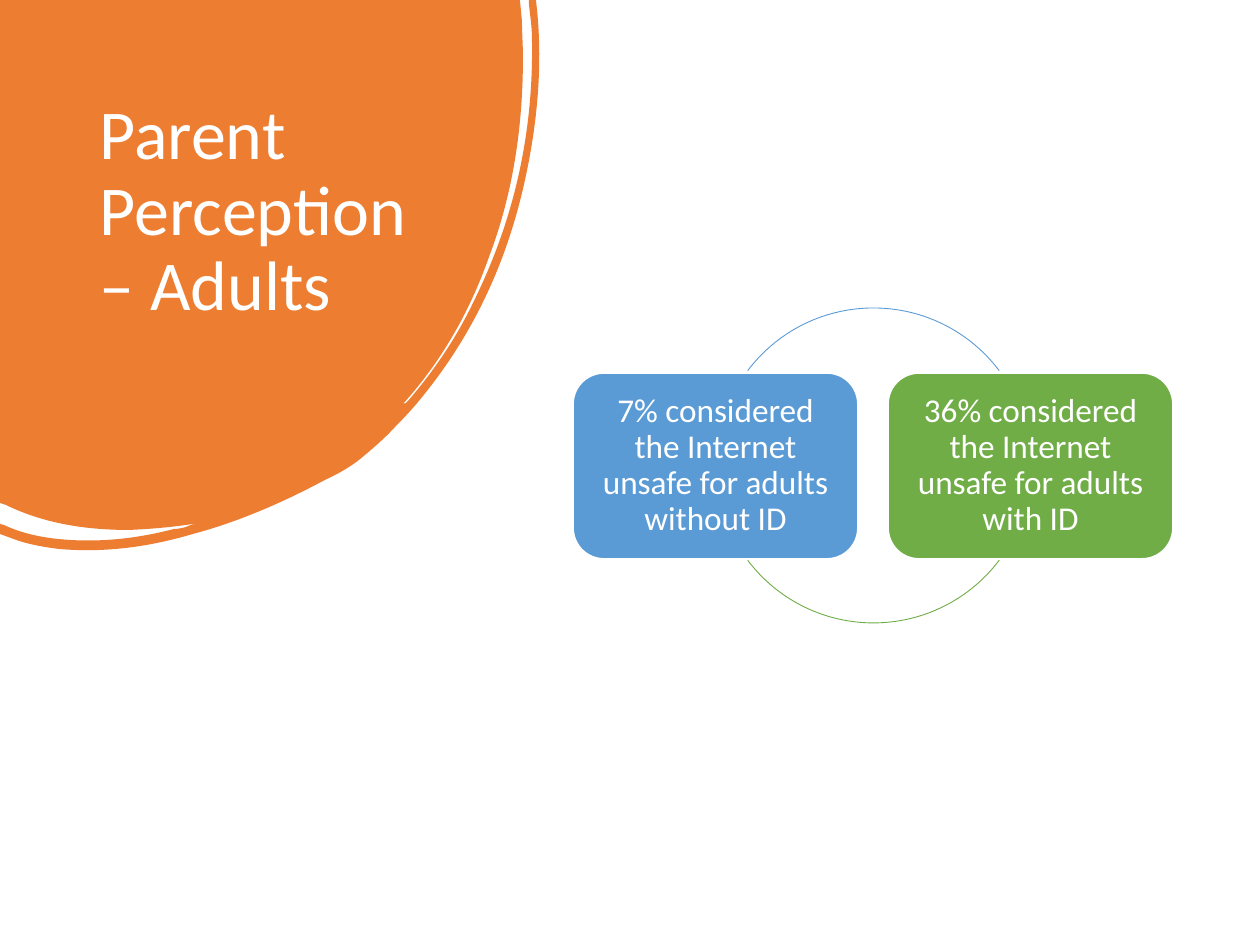
from dataclasses import dataclass

from lxml import etree
from pptx import Presentation
from pptx import util as u
from pptx.dml.color import RGBColor
from pptx.enum import shapes, text
from pptx.oxml.ns import qn

PX = 914400 / 126
FONT = "Calibri"
WHITE, ORANGE, BLUE, GREEN = "FFFFFF", "ED7D31", "5B9BD5", "70AD47"

# Two numbers draw a straight line, six a cubic Bézier curve.
BLOB_WIDTH, BLOB_HEIGHT = 539, 550
BLOB_OUTLINE = [
    (520, 0), (522, 21),
    (522, 33, 523, 45, 523, 57),
    (523, 127, 513, 194, 489, 257),
    (469, 314, 440, 363, 403, 404),
    (406, 404, 407, 402, 408, 401),
    (433, 372, 456, 339, 474, 301),
    (513, 222, 534, 135, 532, 38),
    (532, 26, 530, 15, 529, 4),
    (529, 0), (536, 0), (537, 9),
    (543, 68, 537, 129, 523, 189),
    (504, 270, 470, 338, 423, 396),
    (415, 406, 406, 416, 396, 426),
    (387, 436, 377, 445, 365, 455),
    (354, 465, 340, 473, 325, 480),
    (282, 503, 238, 522, 193, 534),
    (149, 547, 105, 553, 59, 549),
    (43, 547, 26, 544, 11, 538),
    (0, 534), (0, 524), (4, 525),
    (21, 533, 39, 537, 58, 539),
    (97, 543, 136, 539, 174, 529),
    (178, 529, 183, 528, 186, 527),
    (190, 525, 194, 524, 199, 523),
    (175, 527, 152, 529, 129, 530),
    (87, 530, 45, 524, 6, 505),
    (0, 503),
]


@dataclass
class Finding:
    statement: str
    color: str
    arc_start: int  # degrees, clockwise from three o'clock
    arc_end: int


FINDINGS = [
    Finding("7% considered the Internet unsafe for adults without ID", BLUE, 217, 323),
    Finding("36% considered the Internet unsafe for adults with ID", GREEN, 37, 143),
]
BOX_LEFT, BOX_TOP, BOX_WIDTH, BOX_HEIGHT, BOX_PITCH = 573, 373, 285, 186, 315
CIRCLE_LEFT, CIRCLE_TOP, CIRCLE_SIZE = 716, 308, 315


def px(length: int) -> u.Emu:
    return u.Emu(round(length * PX))


def rgb(color: str) -> RGBColor:
    return RGBColor.from_string(color)


def paint(shape, fill: str | None, line: str | None, width: float = 1) -> None:
    shape.shadow.inherit = False
    if fill:
        shape.fill.solid()
        shape.fill.fore_color.rgb = rgb(fill)
    else:
        shape.fill.background()
    if line:
        shape.line.color.rgb = rgb(line)
        shape.line.width = u.Pt(width)
    else:
        shape.line.fill.background()


def write(frame, words: str, size: int, align, anchor) -> None:
    frame.text = words
    frame.word_wrap = True
    frame.auto_size = text.MSO_AUTO_SIZE.NONE
    frame.vertical_anchor = anchor
    paragraph = frame.paragraphs[0]
    paragraph.alignment = align
    paragraph.line_spacing = 0.9
    for run in paragraph.runs:
        run.font.size = u.Pt(size)
        run.font.name = FONT
        run.font.color.rgb = rgb(WHITE)


def bend(blob) -> None:
    """Turn the straight sides that have control points into Bézier curves."""
    outline = blob.element.find(".//" + qn("a:path"))
    outline.set("w", str(BLOB_WIDTH))
    outline.set("h", str(BLOB_HEIGHT))
    blob.width, blob.height = px(BLOB_WIDTH), px(BLOB_HEIGHT)
    for side, segment in zip(outline.findall(qn("a:lnTo")), BLOB_OUTLINE):
        if len(segment) == 6:
            curve = etree.Element(qn("a:cubicBezTo"))
            for x, y in zip(segment[::2], segment[1::2]):
                etree.SubElement(curve, qn("a:pt"), x=str(x), y=str(y))
            outline.replace(side, curve)


def draw_blob(slide):
    builder = slide.shapes.build_freeform(0, 0, scale=PX)
    builder.add_line_segments([segment[-2:] for segment in BLOB_OUTLINE], close=True)
    blob = builder.convert_to_shape()
    bend(blob)
    paint(blob, ORANGE, None)
    return blob


def draw_title(slide, blob) -> None:
    title = slide.shapes.title
    title.left, title.top, title.width, title.height = map(px, (87, 93, 333, 280))
    write(title.text_frame, "Parent Perception – Adults", 40,
          text.PP_ALIGN.LEFT, text.MSO_ANCHOR.TOP)
    title.element.addprevious(blob.element)


def draw_finding(slide, finding: Finding, left: int) -> None:
    box = slide.shapes.add_shape(shapes.MSO_SHAPE.ROUNDED_RECTANGLE, px(left),
                                 px(BOX_TOP), px(BOX_WIDTH), px(BOX_HEIGHT))
    paint(box, finding.color, WHITE)
    frame = box.text_frame
    frame.margin_left = frame.margin_right = px(10)
    frame.margin_top = frame.margin_bottom = px(10)
    write(frame, finding.statement, 19, text.PP_ALIGN.CENTER, text.MSO_ANCHOR.MIDDLE)

    arc = slide.shapes.add_shape(shapes.MSO_SHAPE.ARC, px(CIRCLE_LEFT), px(CIRCLE_TOP),
                                 px(CIRCLE_SIZE), px(CIRCLE_SIZE))
    # Angles are kept in 60000ths of a degree, adjustments in 100000ths.
    arc.adjustments[0] = finding.arc_start * 0.6
    arc.adjustments[1] = finding.arc_end * 0.6
    paint(arc, None, finding.color, 0.5)


def main() -> None:
    deck = Presentation()
    deck.slide_width, deck.slide_height = px(1260), px(945)
    slide = deck.slides.add_slide(deck.slide_layouts[5])
    draw_title(slide, draw_blob(slide))
    for index, finding in enumerate(FINDINGS):
        draw_finding(slide, finding, BOX_LEFT + index * BOX_PITCH)
    deck.save("out.pptx")


if __name__ == "__main__":
    main()
